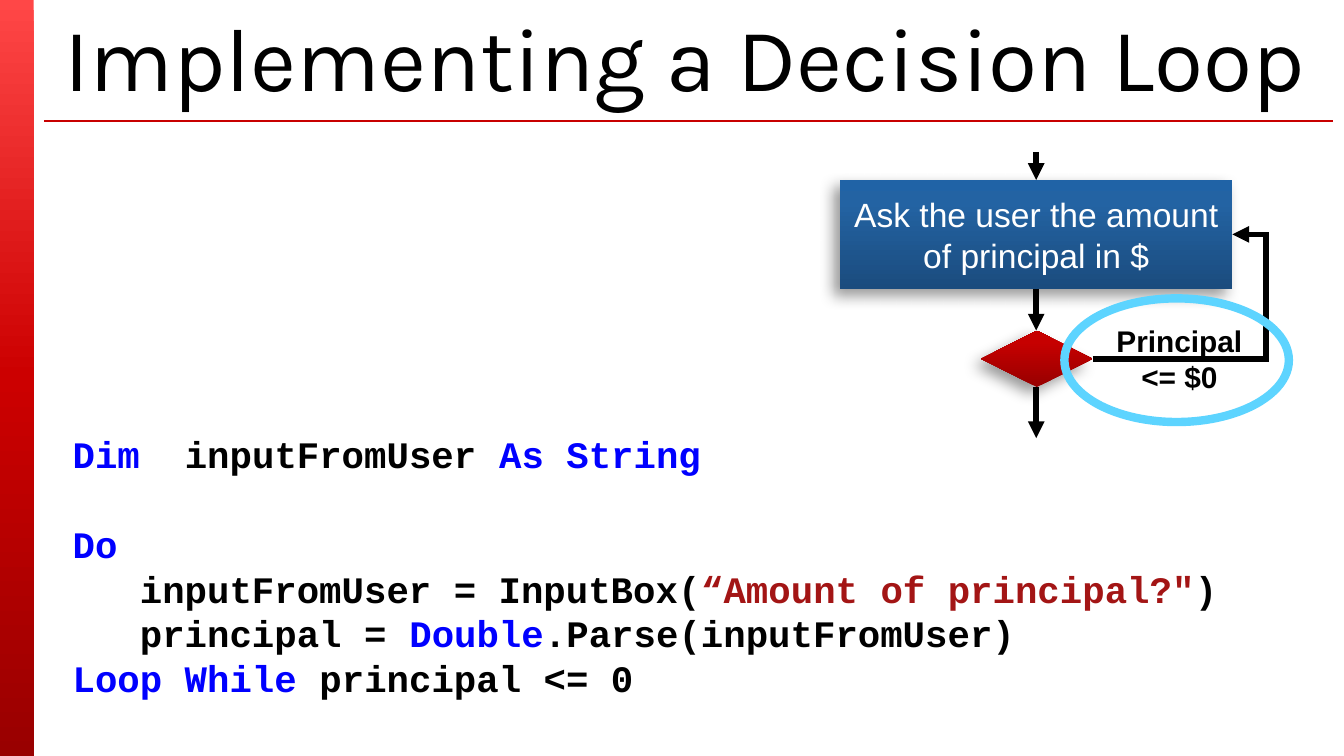
from lxml import etree
from pptx import Presentation
from pptx.dml.color import RGBColor
from pptx.enum import shapes, text
from pptx.oxml import parse_xml
from pptx.oxml.ns import nsdecls, qn
from pptx.util import Inches, Pt

THEME = {
    "title_font": "Karla", "body_font": "Arial", "code_font": "Courier New",
    "title_size": 48, "step_size": 18, "label_size": 16, "code_size": 20,
    "code_pitch": 24,
    "text": "000000", "inverse": "FFFFFF", "rule": "C80000", "highlight": "5DD4FF",
    "keyword": "0000FF", "string": "A31515",
    "bar": [(0, "FF4747"), (50, "CC0000"), (100, "990000")],
    "step": [(0, "1B4C7E"), (80, "2363A3"), (100, "2063A6")],
    "decision": [(0, "980000"), (80, "C60000"), (100, "C70000")],
}

SLIDE_WIDTH = 10
SLIDE_HEIGHT = SLIDE_WIDTH * 9 / 16
TITLE = "Implementing a Decision Loop"
STEP = "Ask the user the amount of principal in $"
CONDITION = "Principal <= $0"

# Each line: (blank lines above, [(text, colour role), ...])
CODE = [
    (0, [("Dim ", "keyword"), (" inputFromUser ", "text"), ("As String", "keyword")]),
    (1, [("Do", "keyword")]),
    (0, [("   inputFromUser = InputBox(", "text"),
         ("“Amount of principal?\"", "string"), (")", "text")]),
    (0, [("   principal = ", "text"), ("Double", "keyword"),
         (".Parse(inputFromUser)", "text")]),
    (0, [("Loop While", "keyword"), (" principal <= 0", "text")]),
]

# Left, top, width, height
STEP_BOX = (6.25, 1.34, 2.92, 0.81)
DECISION_BOX = (7.3, 2.46, 0.83, 0.42)
CONDITION_BOX = (8.05, 2.35, 1.45, 0.64)
HIGHLIGHT_BOX = (7.92, 2.22, 1.67, 0.92)
FLOW_START, FLOW_END = 1.13, 3.26
LOOP_OVERHANG = 0.25


def rgb(value):
    return RGBColor.from_string(value)


def style_run(r, font, size, color, bold=False):
    r.font.name, r.font.size, r.font.bold = font, Pt(size), bold
    r.font.color.rgb = rgb(color)


def fill_gradient(sp, stops, angle):
    """Fill with any number of (percent, colour) stops, angle clockwise."""
    sp.fill.gradient()
    grad = sp._element.spPr.find(qn("a:gradFill"))
    stop_list = grad.find(qn("a:gsLst"))
    for old in list(stop_list):
        stop_list.remove(old)
    for percent, color in stops:
        gs = etree.SubElement(stop_list, qn("a:gs"), pos=str(percent * 1000))
        etree.SubElement(gs, qn("a:srgbClr"), val=color)
    grad.find(qn("a:lin")).set("ang", str(angle * 60000))


def add_shape(parent, kind, box, stops=None, angle=90):
    sp = parent.add_shape(kind, *map(Inches, box))
    sp.shadow.inherit = False
    sp.line.fill.background()
    if stops:
        fill_gradient(sp, stops, angle)
    else:
        sp.fill.background()
    return sp


def cast_shadow(sp):
    effects = sp._element.spPr.find(qn("a:effectLst"))
    effects.append(parse_xml(
        f'<a:outerShdw {nsdecls("a")} blurRad="{Pt(8)}" dist="{Pt(5)}" dir="8100000" '
        'rotWithShape="0"><a:srgbClr val="000000"><a:alpha val="40000"/></a:srgbClr>'
        '</a:outerShdw>'))


def add_line(parent, start, end, color, width, arrow=False, bend=None):
    kind = shapes.MSO_CONNECTOR.STRAIGHT if bend is None else shapes.MSO_CONNECTOR.ELBOW
    line = parent.add_connector(kind, *map(Inches, (*start, *end)))
    line.line.color.rgb = rgb(color)
    line.line.width = Pt(width)
    spPr = line._element.spPr
    etree.SubElement(spPr, qn("a:effectLst"))
    if arrow:
        ln = spPr.find(qn("a:ln"))
        etree.SubElement(ln, qn("a:miter"), lim="800000")
        etree.SubElement(ln, qn("a:tailEnd"), type="triangle")
    if bend is not None:
        guides = spPr.find(qn("a:prstGeom")).get_or_add_avLst()
        etree.SubElement(guides, qn("a:gd"), name="adj1", fmla=f"val {round(bend * 100000)}")


def set_centred_text(sp, content, size, color, bold=False):
    tf = sp.text_frame
    tf.text = content
    tf.word_wrap = True
    p = tf.paragraphs[0]
    p.alignment = text.PP_ALIGN.CENTER
    style_run(p.runs[0], THEME["body_font"], size, color, bold)
    return tf


def add_title(slide):
    title = slide.shapes.title
    title.left, title.top, title.width, title.height = map(Inches, (0.38, 0.15, 9.58, 0.53))
    tf = title.text_frame
    tf.text = TITLE
    tf.auto_size = text.MSO_AUTO_SIZE.NONE
    tf.vertical_anchor = text.MSO_ANCHOR.MIDDLE
    p = tf.paragraphs[0]
    p.alignment = text.PP_ALIGN.LEFT
    style_run(p.runs[0], THEME["title_font"], THEME["title_size"], THEME["text"])


def add_code(slide):
    tf = slide.shapes.add_textbox(*map(Inches, (0.54, 3.21, 9.21, 2.36))).text_frame
    tf.word_wrap = True
    tf.margin_left = tf.margin_right = tf.margin_top = tf.margin_bottom = 0
    for i, (blank_lines, pieces) in enumerate(CODE):
        p = tf.add_paragraph() if i else tf.paragraphs[0]
        p.line_spacing = Pt(THEME["code_pitch"])
        if blank_lines:
            p.space_before = Pt(blank_lines * THEME["code_pitch"])
        for content, role in pieces:
            r = p.add_run()
            r.text = content
            style_run(r, THEME["code_font"], THEME["code_size"], THEME[role], True)


def add_flowchart(slide):
    parts = slide.shapes.add_group_shape().shapes
    left, top, width, height = STEP_BOX
    right, bottom, axis = left + width, top + height, left + width / 2
    d_left, d_top, d_width, d_height = DECISION_BOX
    d_right, d_bottom = d_left + d_width, d_top + d_height

    step = add_shape(parts, shapes.MSO_SHAPE.FLOWCHART_PROCESS, STEP_BOX, THEME["step"], 270)
    cast_shadow(step)
    tf = set_centred_text(step, STEP, THEME["step_size"], THEME["inverse"])
    tf.vertical_anchor = text.MSO_ANCHOR.MIDDLE
    tf.margin_left = tf.margin_right = tf.margin_top = tf.margin_bottom = Inches(0.05)

    decision = add_shape(parts, shapes.MSO_SHAPE.FLOWCHART_DECISION, DECISION_BOX,
                         THEME["decision"], 270)
    cast_shadow(decision)

    add_line(parts, (d_right, d_top + d_height / 2), (right, top + height / 2),
             THEME["text"], 3, arrow=True, bend=1 + LOOP_OVERHANG / (right - d_right))
    for y1, y2 in [(bottom, d_top), (d_bottom, FLOW_END), (FLOW_START, top)]:
        add_line(parts, (axis, y1), (axis, y2), THEME["text"], 3, arrow=True)

    label = parts.add_textbox(*map(Inches, CONDITION_BOX))
    set_centred_text(label, CONDITION, THEME["label_size"], THEME["text"], True)

    ring = add_shape(parts, shapes.MSO_SHAPE.OVAL, HIGHLIGHT_BOX)
    ring.line.color.rgb = rgb(THEME["highlight"])
    ring.line.width = Pt(4.5)


def main():
    prs = Presentation()
    prs.slide_width, prs.slide_height = Inches(SLIDE_WIDTH), Inches(SLIDE_HEIGHT)
    slide = prs.slides.add_slide(prs.slide_layouts[5])
    add_shape(slide.shapes, shapes.MSO_SHAPE.RECTANGLE, (0, 0, 0.25, SLIDE_HEIGHT), THEME["bar"])
    add_line(slide.shapes, (0.33, 0.9), (9.92, 0.9), THEME["rule"], 0.75)
    add_title(slide)
    add_code(slide)
    add_flowchart(slide)
    prs.save("out.pptx")


if __name__ == "__main__":
    main()
